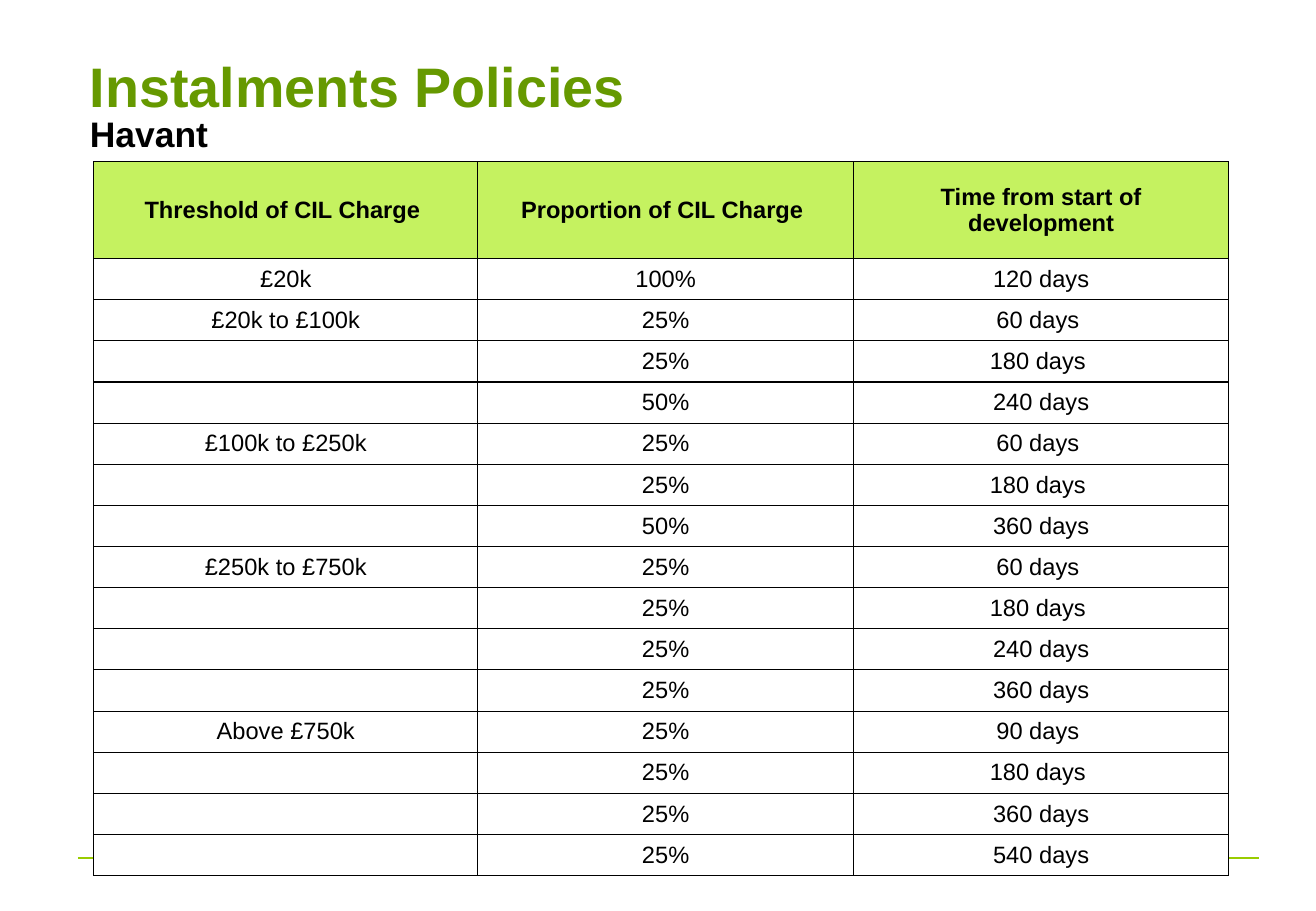
import pptx
import pptx.dml.color
import pptx.enum.shapes
import pptx.enum.text
import pptx.oxml
import pptx.oxml.ns
import pptx.util

Cm, Pt = pptx.util.Cm, pptx.util.Pt
ANCHOR = pptx.enum.text.MSO_ANCHOR

# Content
TITLE = "Instalments Policies"
COUNCIL = "Havant"
HEADINGS = ("Threshold of CIL Charge ", "Proportion of CIL Charge ", "Time from start of development")
POLICIES = [
    ("£20k", [("100%", "120 days")]),
    ("£20k to £100k", [("25%", "60 days "), ("25%", "180 days "), ("50%", "240 days")]),
    ("£100k to £250k", [("25%", "60 days "), ("25%", "180 days "), ("50%", "360 days")]),
    ("£250k to £750k", [("25%", "60 days "), ("25%", "180 days "),
                        ("25%", "240 days"), ("25%", "360 days")]),
    ("Above £750k", [("25%", "90 days "), ("25%", "180 days "),
                     ("25%", "360 days"), ("25%", "540 days")]),
]

# Layout in centimetres
TEXT_LEFT, TEXT_WIDTH = 1.63, 24.77
RULE_Y, RULE_RIGHT = 17.94, 26.31
TABLE_LEFT, TABLE_TOP = 1.96, 3.38
COLUMN_WIDTHS = (8.03, 7.85, 7.85)
HEADING_HEIGHT, ROW_HEIGHT = 2.03, 0.86
CELL_SIZE = 14


def colour(value):
    return pptx.dml.color.RGBColor.from_string(value)


def style(paragraph, size, hex_colour, bold):
    font = paragraph.font
    font.name, font.size, font.bold = "Arial", Pt(size), bold
    font.color.rgb = colour(hex_colour)


def add_text(text, top, height, size, hex_colour, anchor):
    frame = slide.shapes.add_textbox(Cm(TEXT_LEFT), Cm(top), Cm(TEXT_WIDTH), Cm(height)).text_frame
    frame.word_wrap = True
    frame.vertical_anchor = anchor
    frame.text = text
    style(frame.paragraphs[0], size, hex_colour, True)


def add_borders(cell):
    properties = cell._tc.get_or_add_tcPr()
    for index, side in enumerate(("lnL", "lnR", "lnT", "lnB")):
        properties.insert(index, pptx.oxml.parse_xml(
            f'<a:{side} {pptx.oxml.ns.nsdecls("a")} w="{Pt(0.75)}">'
            f'<a:solidFill><a:srgbClr val="000000"/></a:solidFill></a:{side}>'))


def fill_cell(cell, text, is_heading):
    add_borders(cell)
    cell.fill.solid()
    cell.fill.fore_color.rgb = colour("C5F260" if is_heading else "FFFFFF")
    cell.vertical_anchor = ANCHOR.MIDDLE
    cell.margin_left = cell.margin_right = Cm(0.23)
    cell.margin_top = cell.margin_bottom = Cm(0.12)
    cell.text_frame.text = text
    paragraph = cell.text_frame.paragraphs[0]
    paragraph.alignment = pptx.enum.text.PP_ALIGN.CENTER
    style(paragraph, CELL_SIZE, "000000", is_heading)
    if not text:
        # Empty cells need their own text size to keep the row height
        paragraph._p.append(pptx.oxml.parse_xml(
            f'<a:endParaRPr {pptx.oxml.ns.nsdecls("a")} sz="{CELL_SIZE * 100}"/>'))


presentation = pptx.Presentation()
presentation.slide_width, presentation.slide_height = Cm(27.51), Cm(19.05)
slide = presentation.slides.add_slide(presentation.slide_layouts[6])

# Footer rule, behind the table
rule = slide.shapes.add_connector(pptx.enum.shapes.MSO_CONNECTOR.STRAIGHT,
                                  Cm(TEXT_LEFT), Cm(RULE_Y), Cm(RULE_RIGHT), Cm(RULE_Y))
rule.line.color.rgb = colour("99CC00")
rule.line.width = Pt(0.75)
rule._element.spPr.append(pptx.oxml.parse_xml(f'<a:effectLst {pptx.oxml.ns.nsdecls("a")}/>'))

# Title and council
add_text(TITLE, 0.76, 2.06, 33, "669900", ANCHOR.MIDDLE)
add_text(COUNCIL, 2.21, 1.27, 21, "000000", ANCHOR.TOP)

# Instalments table: each threshold shows only on its first row
rows = [HEADINGS] + [
    (threshold if index == 0 else "", proportion, time)
    for threshold, instalments in POLICIES
    for index, (proportion, time) in enumerate(instalments)
]
heights = [HEADING_HEIGHT] + [ROW_HEIGHT] * (len(rows) - 1)
instalments_table = slide.shapes.add_table(
    len(rows), len(HEADINGS), Cm(TABLE_LEFT), Cm(TABLE_TOP),
    Cm(sum(COLUMN_WIDTHS)), Cm(sum(heights))).table
instalments_table.first_row = instalments_table.horz_banding = False
for column, width in zip(instalments_table.columns, COLUMN_WIDTHS):
    column.width = Cm(width)
for row_index, (row, values, height) in enumerate(zip(instalments_table.rows, rows, heights)):
    row.height = Cm(height)
    for cell, value in zip(row.cells, values):
        fill_cell(cell, value, row_index == 0)

presentation.save("out.pptx")
